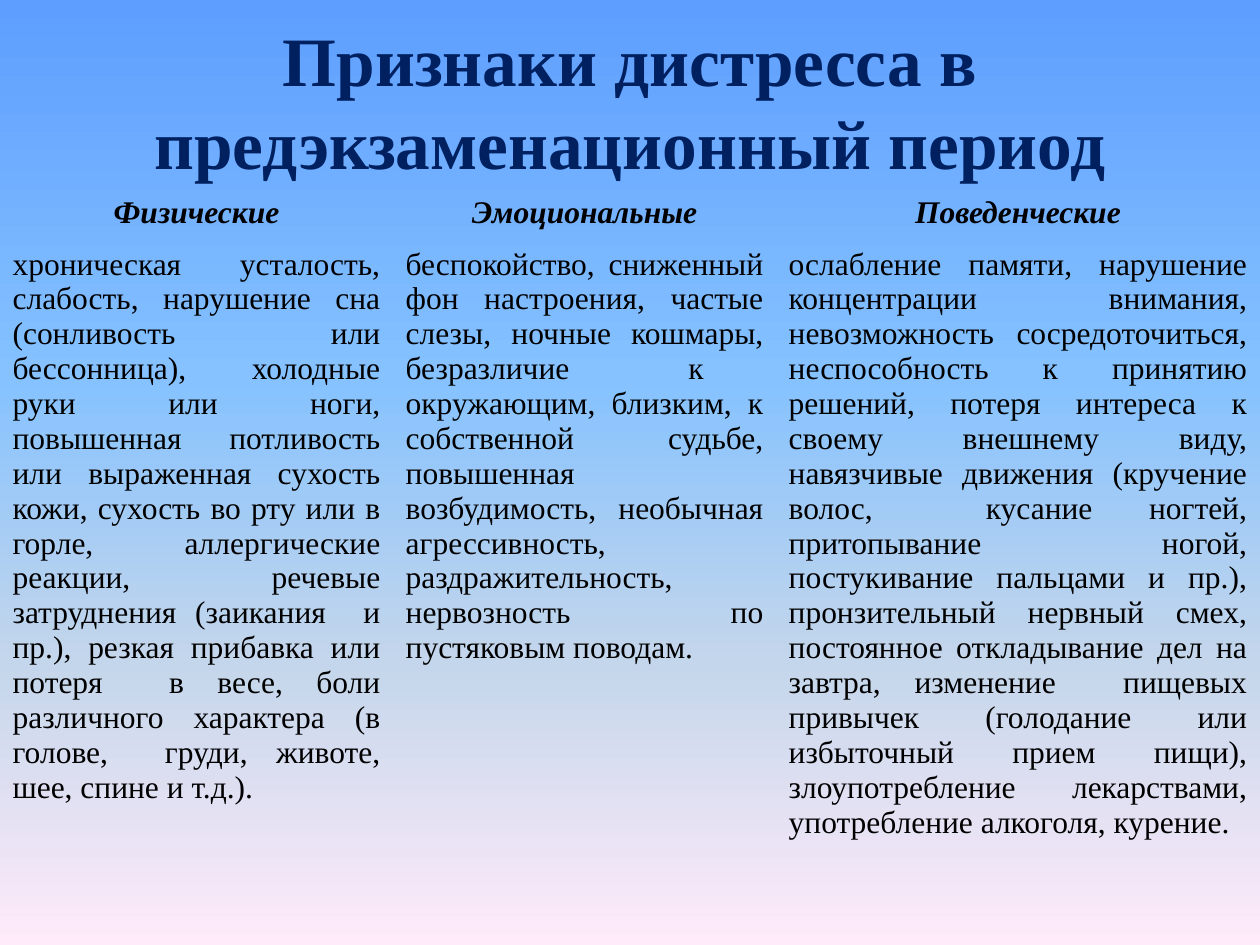
from copy import deepcopy
from dataclasses import dataclass

from pptx import Presentation
from pptx.dml.color import RGBColor
from pptx.enum.text import MSO_ANCHOR, MSO_AUTO_SIZE, PP_ALIGN
from pptx.oxml.ns import qn
from pptx.util import Inches, Pt


@dataclass(frozen=True)
class Theme:
    """Fonts, type sizes and colours of the slide."""
    face: str = "Times New Roman"
    title: float = 39.6
    cell: float = 18
    navy: str = "002060"
    black: str = "000000"
    stops: tuple = ((0, "5E9EFF"), (0.4, "85C2FF"),
                    (0.7, "C4D6EB"), (1, "FFEBFA"))


THEME = Theme()
TITLE = "Признаки дистресса в предэкзаменационный период"
WIDTHS = (3.12, 3.04, 3.84)
HEADS = ("Физические", "Эмоциональные", "Поведенческие")
SIGNS = (
    "хроническая усталость, слабость, нарушение сна (сонливость или "
    "бессонница), холодные руки или ноги, повышенная потливость или "
    "выраженная сухость кожи, сухость во рту или в горле, аллергические "
    "реакции, речевые затруднения (заикания  и пр.), резкая прибавка или "
    "потеря  в весе, боли различного характера (в голове,  груди, животе, "
    "шее, спине и т.д.).",
    "беспокойство, сниженный фон настроения, частые слезы, ночные кошмары, "
    "безразличие  к  окружающим, близким, к собственной судьбе, повышенная "
    "возбудимость, необычная агрессивность, раздражительность, нервозность "
    "по пустяковым поводам.",
    "ослабление памяти, нарушение концентрации внимания, невозможность "
    "сосредоточиться, неспособность к принятию решений,  потеря  интереса  к "
    "своему внешнему виду, навязчивые движения (кручение волос,  кусание "
    "ногтей, притопывание ногой, постукивание пальцами и пр.), пронзительный "
    "нервный смех, постоянное откладывание дел на завтра, изменение  пищевых "
    "привычек (голодание или избыточный прием пищи), злоупотребление "
    "лекарствами, употребление алкоголя, курение.",
)


def apply(item, **values):
    """Set each named attribute of an item."""
    for name, value in values.items():
        setattr(item, name, value)


def write(frame, text, align, size, color, **style):
    """Fill a text frame with one styled paragraph."""
    frame.text = text
    para = frame.paragraphs[0]
    para.alignment = align
    font = para.runs[0].font
    apply(font, name=THEME.face, size=Pt(size), **style)
    font.color.rgb = RGBColor.from_string(color)


def paint(slide):
    """Fill the background with the vertical gradient."""
    fill = slide.background.fill
    fill.gradient()
    fill.gradient_angle = 270
    stops = slide.element.find(".//" + qn("a:gsLst"))
    while len(stops) < len(THEME.stops):
        stops.append(deepcopy(stops[0]))
    for stop, (place, color) in zip(fill.gradient_stops, THEME.stops):
        stop.position = place
        stop.color.rgb = RGBColor.from_string(color)


def head(slide):
    """Place and write the title."""
    title = slide.shapes.title
    apply(title, left=Inches(0.5), top=Inches(0.17),
          width=Inches(9), height=Inches(1.25))
    frame = title.text_frame
    apply(frame, vertical_anchor=MSO_ANCHOR.MIDDLE, word_wrap=True,
          auto_size=MSO_AUTO_SIZE.NONE)
    write(frame, TITLE, PP_ALIGN.CENTER, THEME.title, THEME.navy, bold=True)


def grid(slide):
    """Add the table of signs with clear cells."""
    table = slide.shapes.add_table(
        2, len(HEADS), 0, Inches(1.5), Inches(10), Inches(0.82)).table
    apply(table, first_row=False, horz_banding=False)
    for column, width in zip(table.columns, WIDTHS):
        column.width = Inches(width)
    looks = ((HEADS, PP_ALIGN.CENTER, True), (SIGNS, PP_ALIGN.JUSTIFY, False))
    for row, (texts, align, strong) in zip(table.rows, looks):
        for cell, text in zip(row.cells, texts):
            cell.fill.background()
            write(cell.text_frame, text, align, THEME.cell, THEME.black,
                  bold=strong, italic=strong)
    style = table._tbl.tblPr.find(qn("a:tableStyleId"))
    style.text = "{2D5ABB26-0587-4C30-8999-92F81FD0307C}"


def main():
    """Build and save the slide."""
    deck = Presentation()
    apply(deck, slide_width=Inches(10), slide_height=Inches(7.5))
    slide = deck.slides.add_slide(deck.slide_layouts[5])
    paint(slide)
    head(slide)
    grid(slide)
    deck.save("out.pptx")


if __name__ == "__main__":
    main()
